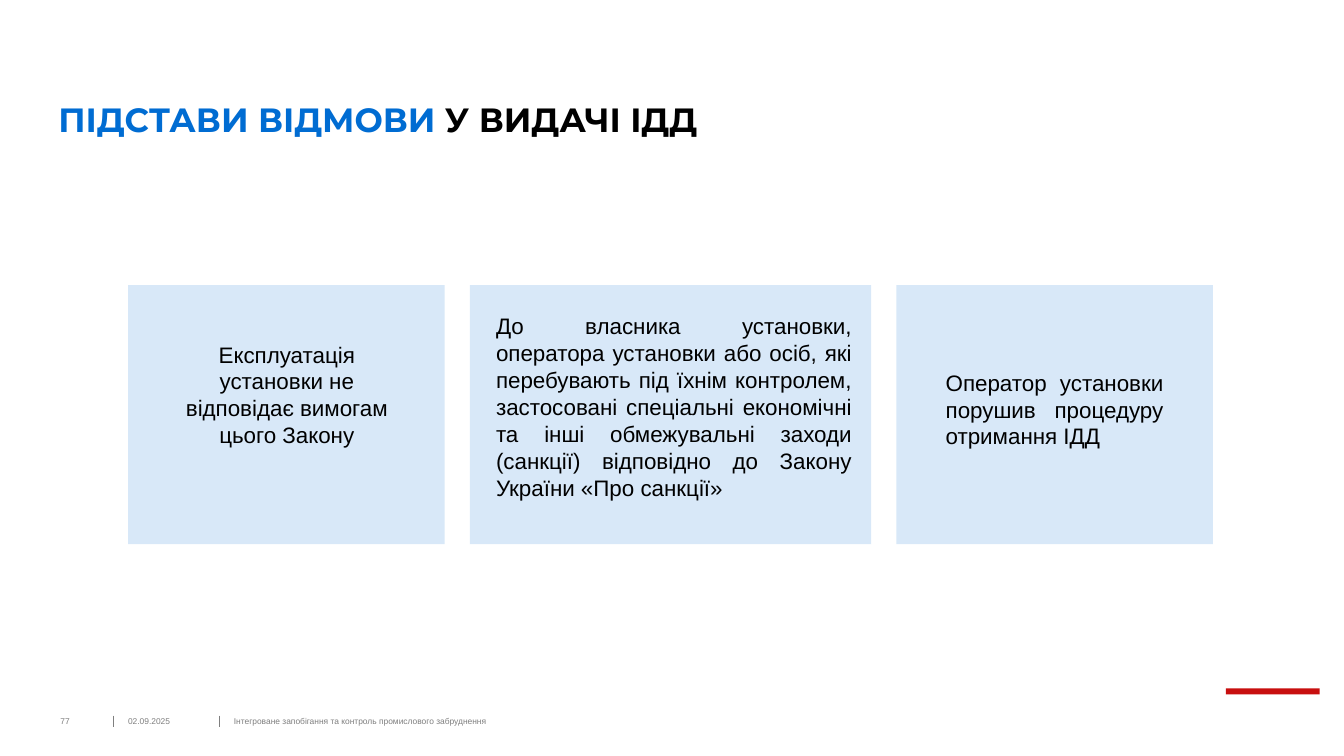
from lxml import etree
from pptx import Presentation
from pptx.dml.color import RGBColor
from pptx.enum.shapes import MSO_CONNECTOR, MSO_SHAPE
from pptx.enum.text import MSO_ANCHOR, PP_ALIGN
from pptx.oxml.ns import qn
from pptx.util import Pt

RECT, LINE = MSO_SHAPE.RECTANGLE, MSO_CONNECTOR.STRAIGHT
TOP, MID, LOW = MSO_ANCHOR.TOP, MSO_ANCHOR.MIDDLE, MSO_ANCHOR.BOTTOM
LEFT, MIDDLE, FULL = PP_ALIGN.LEFT, PP_ALIGN.CENTER, PP_ALIGN.JUSTIFY
PX = 9144  # 100 px to the inch

BLACK, BLUE, PALE, RED, GREY = "000000", "006CD2", "D8E8F8", "C80F0F", "7F7F7F"

TITLE = [("ПІДСТАВИ ВІДМОВИ ", BLUE), ("У ВИДАЧІ ІДД", BLACK)]
# card width, text box (left, top, width, height), alignment, text
CARDS = [
    (314, (170, 338, 229, 148), MIDDLE,
     "Експлуатація установки не відповідає вимогам цього Закону"),
    (398, (492, 310, 353, 199), FULL,
     "До власника установки, оператора установки або осіб, які перебувають "
     "під їхнім контролем, застосовані спеціальні економічні та інші "
     "обмежувальні заходи (санкції) відповідно до Закону України "
     "«Про санкції»"),
    (314, (938, 366, 216, 90), FULL,
     "Оператор установки порушив процедуру отримання ІДД"),
]
CARD_LEFT, CARD_TOP, CARD_HIGH, GAP = 127, 283, 257, 25
# left, width, text
FOOTER = [
    (60, 49, "77"),
    (127, 79, "02.09.2025"),
    (232, 748, "Інтегроване запобігання та контроль промислового забруднення"),
]
FOOT_TOP, FOOT_HIGH, RULE_HIGH = 710, 10, 11
RULES = [113, 218]
ACCENT = (1216, 683, 93, 6)


def color(code):
    return RGBColor.from_string(code)


def scale(box):
    return [n * PX for n in box]


def block(slide, box, fill):
    shape = slide.shapes.add_shape(RECT, *scale(box))
    shape.shadow.inherit = False
    shape.fill.solid()
    shape.fill.fore_color.rgb = color(fill)
    shape.line.fill.background()


def write(slide, box, runs, size, font="Arial", bold=False,
          align=LEFT, anchor=TOP, space=1.0):
    frame = slide.shapes.add_textbox(*scale(box)).text_frame
    frame.word_wrap = True
    frame.vertical_anchor = anchor
    frame.margin_left = frame.margin_right = 0
    frame.margin_top = frame.margin_bottom = 0
    para = frame.paragraphs[0]
    para.alignment = align
    para.line_spacing = space
    for text, code in runs:
        run = para.add_run()
        run.text = text
        run.font.size = Pt(size)
        run.font.name = font
        run.font.bold = bold
        run.font.color.rgb = color(code)


def rule(slide, x):
    ends = scale((x, FOOT_TOP, x, FOOT_TOP + RULE_HIGH))
    line = slide.shapes.add_connector(LINE, *ends)
    line.line.color.rgb = color(GREY)
    line.line.width = Pt(0.75)
    etree.SubElement(line._element.spPr, qn("a:effectLst"))


def main():
    deck = Presentation()
    deck.slide_width, deck.slide_height = scale((1333, 750))
    slide = deck.slides.add_slide(deck.slide_layouts[6])

    write(slide, (58, 40, 803, 99), TITLE, 24, "Montserrat", True,
          anchor=LOW, space=0.9)

    left = CARD_LEFT
    for wide, box, align, text in CARDS:
        block(slide, (left, CARD_TOP, wide, CARD_HIGH), PALE)
        write(slide, box, [(text, BLACK)], 16, align=align)
        left += wide + GAP

    block(slide, ACCENT, RED)
    for x in RULES:
        rule(slide, x)
    for x, wide, text in FOOTER:
        write(slide, (x, FOOT_TOP, wide, FOOT_HIGH), [(text, GREY)], 6,
              anchor=MID)

    deck.save("out.pptx")


if __name__ == "__main__":
    main()
